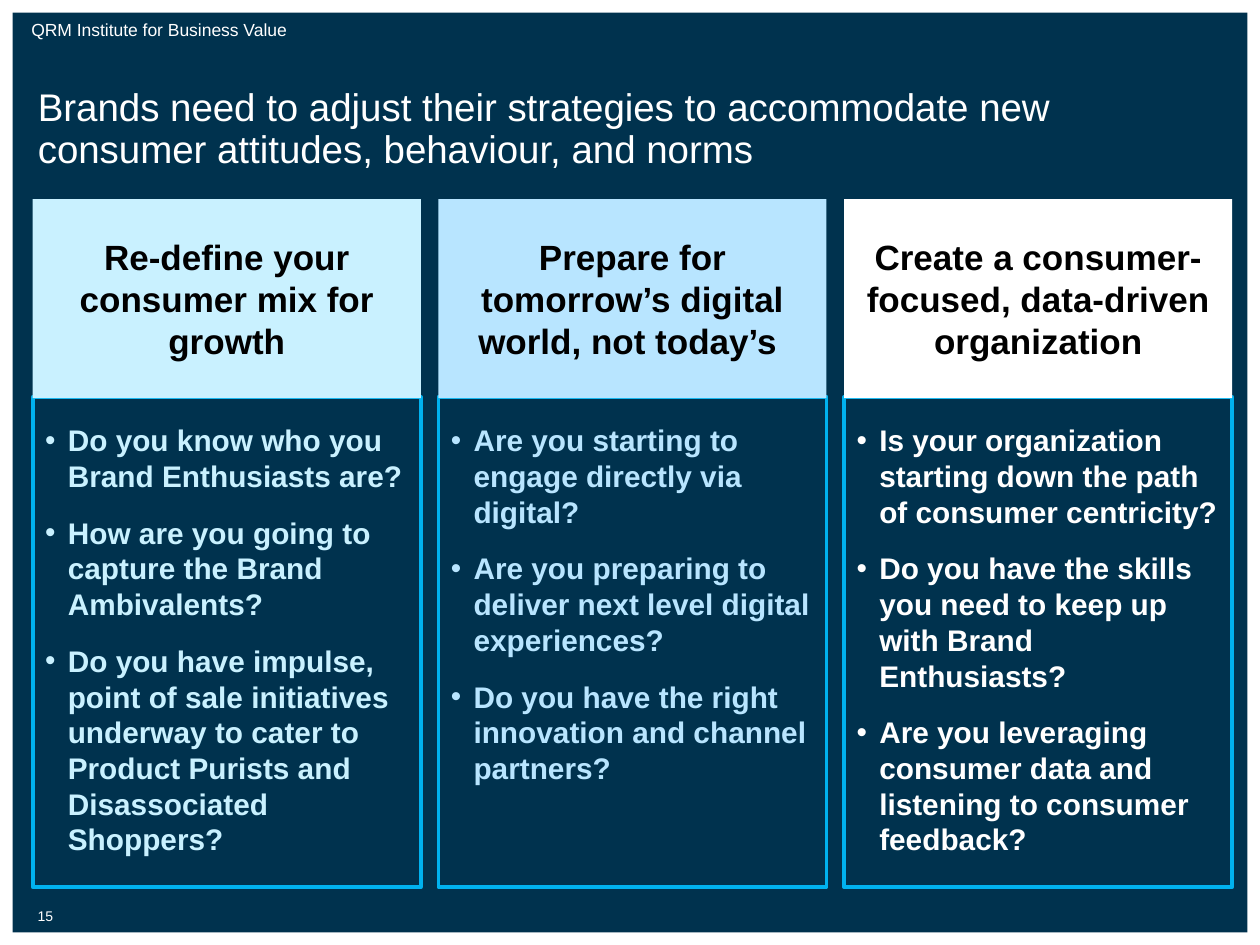
from dataclasses import dataclass

from lxml.etree import SubElement
from pptx import Presentation
from pptx.dml.color import RGBColor
from pptx.enum.shapes import MSO_SHAPE
from pptx.enum.text import MSO_ANCHOR, MSO_AUTO_SIZE, PP_ALIGN
from pptx.oxml.ns import qn
from pptx.shapes.autoshape import Shape
from pptx.slide import Slide
from pptx.text.text import TextFrame
from pptx.util import Inches, Pt

NAVY, WHITE, BLACK = "00324E", "FFFFFF", "000000"
BORDER, ICE, SKY = "00B2EF", "C9F1FF", "B8E5FF"

COLUMN_LEFT, COLUMN_STEP, COLUMN_WIDTH = 0.26, 3.22, 3.08
HEADING_TOP, HEADING_HEIGHT = 1.58, 1.58
BODY_TOP, BODY_HEIGHT = 3.15, 3.89


@dataclass
class Strategy:
    heading: str
    color: str
    questions: list[str]
    heading_inset: float = 0.1


STRATEGIES = [
    Strategy("Re-define your consumer mix for growth", ICE, [
        "Do you know who you Brand Enthusiasts are?",
        "How are you going to capture the Brand Ambivalents?",
        "Do you have impulse, point of sale initiatives underway to cater to "
        "Product Purists and Disassociated Shoppers?",
    ]),
    Strategy("Prepare for tomorrow’s digital world, not today’s ", SKY, [
        "Are you starting to engage directly via digital?",
        "Are you preparing to deliver next level digital experiences?",
        "Do you have the right innovation and channel partners?",
    ], heading_inset=0.2),
    Strategy("Create a consumer-focused, data-driven organization", WHITE, [
        "Is your organization starting down the path of consumer centricity?",
        "Do you have the skills you need to keep up with Brand Enthusiasts?",
        "Are you leveraging consumer data and listening to consumer feedback?",
    ]),
]


def rgb(color: str) -> RGBColor:
    return RGBColor.from_string(color)


def set_insets(frame: TextFrame, side: float, top: float, bottom: float) -> None:
    frame.word_wrap = True
    frame.margin_left = frame.margin_right = Inches(side)
    frame.margin_top, frame.margin_bottom = Inches(top), Inches(bottom)


def style_text(frame: TextFrame, size: float, color: str, bold: bool = False) -> None:
    for paragraph in frame.paragraphs:
        font = paragraph.font
        font.name, font.size, font.bold = "Arial", Pt(size), bold
        font.color.rgb = rgb(color)


def add_panel(slide: Slide, left: float, top: float, width: float, height: float,
              fill: str | None = None, line: str | None = None) -> Shape:
    panel = slide.shapes.add_shape(MSO_SHAPE.RECTANGLE, Inches(left), Inches(top),
                                   Inches(width), Inches(height))
    panel.shadow.inherit = False
    if fill:
        panel.fill.solid()
        panel.fill.fore_color.rgb = rgb(fill)
    else:
        panel.fill.background()
    if line:
        panel.line.color.rgb = rgb(line)
        panel.line.width = Pt(2.25)
    else:
        panel.line.fill.background()
    return panel


def add_label(slide: Slide, text: str, left: float, top: float, width: float,
              size: float, inset: float, anchor: MSO_ANCHOR) -> None:
    label = slide.shapes.add_textbox(Inches(left), Inches(top), Inches(width), Inches(0.2))
    frame = label.text_frame
    frame.text = text
    set_insets(frame, 0.1, inset, inset)
    frame.vertical_anchor = anchor
    style_text(frame, size, WHITE)


def add_questions(slide: Slide, strategy: Strategy, left: float) -> None:
    body = add_panel(slide, left, BODY_TOP, COLUMN_WIDTH, BODY_HEIGHT, line=BORDER)
    frame = body.text_frame
    frame.text = "\n".join(strategy.questions)
    set_insets(frame, 0.1, 0.2, 0.1)
    frame.vertical_anchor = MSO_ANCHOR.TOP
    for paragraph in frame.paragraphs:
        paragraph.alignment = PP_ALIGN.LEFT
        paragraph.space_after = Pt(12)
        properties = paragraph._p.get_or_add_pPr()
        properties.set("marL", str(Inches(0.18)))
        properties.set("indent", str(Inches(-0.18)))
        SubElement(properties, qn("a:buFont")).set("typeface", "Arial")
        SubElement(properties, qn("a:buChar")).set("char", "•")
    style_text(frame, 17, strategy.color, bold=True)


def add_heading(slide: Slide, strategy: Strategy, left: float) -> None:
    heading = add_panel(slide, left, HEADING_TOP, COLUMN_WIDTH, HEADING_HEIGHT,
                        fill=strategy.color)
    frame = heading.text_frame
    frame.text = strategy.heading
    set_insets(frame, strategy.heading_inset, 0.05, 0.05)
    frame.vertical_anchor = MSO_ANCHOR.MIDDLE
    frame.paragraphs[0].alignment = PP_ALIGN.CENTER
    style_text(frame, 20, BLACK, bold=True)


def format_title(slide: Slide, text: str) -> None:
    title = slide.shapes.title
    title.left, title.top = Inches(0.2), Inches(0.65)
    title.width, title.height = Inches(9.65), Inches(0.81)
    frame = title.text_frame
    frame.text = text
    set_insets(frame, 0.1, 0.05, 0.05)
    frame.auto_size = MSO_AUTO_SIZE.NONE
    frame.vertical_anchor = MSO_ANCHOR.TOP
    frame.paragraphs[0].alignment = PP_ALIGN.LEFT
    frame.paragraphs[0].line_spacing = 0.9
    style_text(frame, 22, WHITE)
    # Bring the title in front of the backdrop
    slide.shapes._spTree.append(title._element)


def main() -> None:
    presentation = Presentation()
    presentation.slide_width, presentation.slide_height = Inches(10), Inches(7.5)
    slide = presentation.slides.add_slide(presentation.slide_layouts[5])

    # Backdrop, running header and page number
    add_panel(slide, 0.1, 0.1, 9.8, 7.3, fill=NAVY)
    add_label(slide, "QRM Institute for Business Value", 0.15, 0.12, 8.65,
              size=10, inset=0, anchor=MSO_ANCHOR.BOTTOM)
    add_label(slide, "15", 0.2, 7.15, 0.4, size=8, inset=0.05, anchor=MSO_ANCHOR.TOP)

    # Strategy columns
    for index, strategy in enumerate(STRATEGIES):
        left = COLUMN_LEFT + index * COLUMN_STEP
        add_questions(slide, strategy, left)
        add_heading(slide, strategy, left)

    format_title(slide, "Brands need to adjust their strategies to accommodate new "
                        "consumer attitudes, behaviour, and norms")
    presentation.save("out.pptx")


if __name__ == "__main__":
    main()
